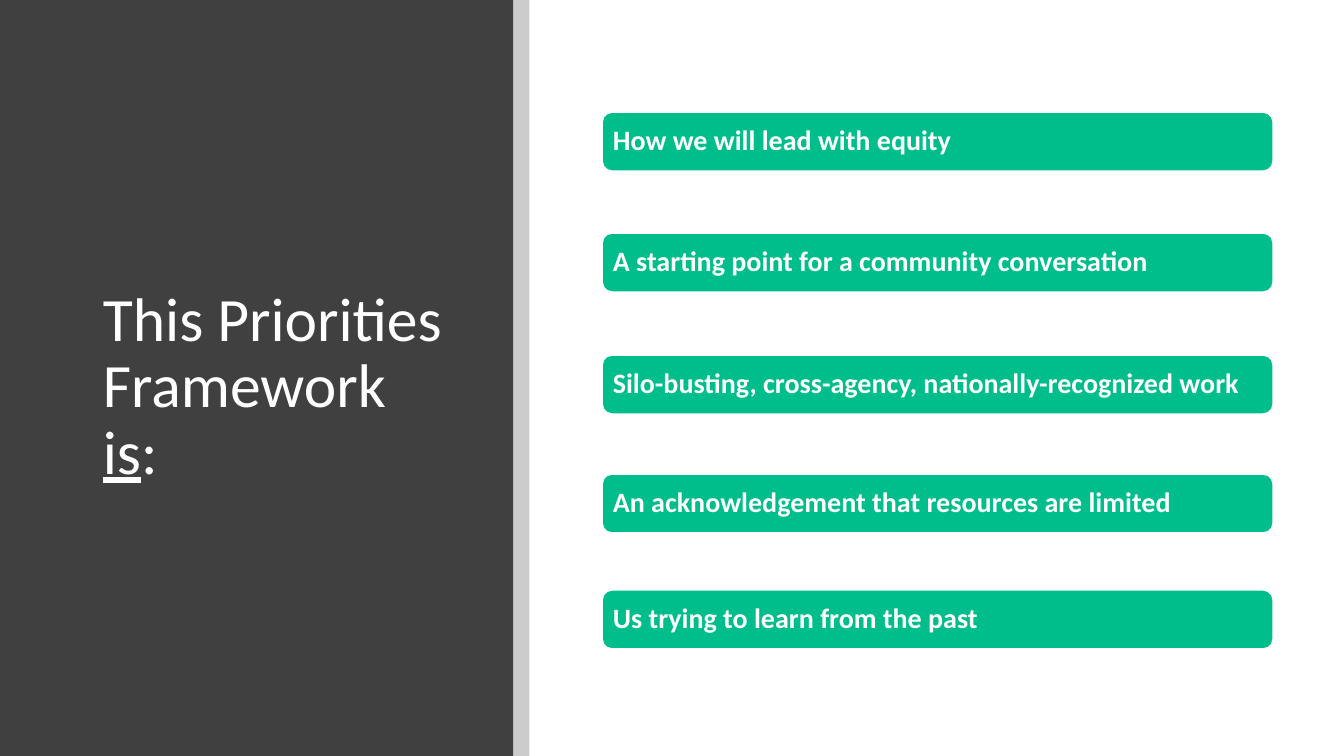
"""Build the slide that says what the Priorities Framework is."""
from lxml import etree
from pptx import Presentation
from pptx.dml.color import RGBColor
from pptx.enum import shapes, text
from pptx.oxml.ns import qn
from pptx.util import Inches, Pt

CHARCOAL = RGBColor(0x40, 0x40, 0x40)
BLACK = RGBColor(0x00, 0x00, 0x00)
WHITE = RGBColor(0xFF, 0xFF, 0xFF)
GREEN = RGBColor(0x00, 0xBE, 0x8C)

TITLE_FONT = {"name": "Calibri", "size": Pt(44)}
BAR_FONT = {"name": "Calibri", "size": Pt(20), "bold": True}
BAR_FRAME = {
    "word_wrap": True,
    "vertical_anchor": text.MSO_ANCHOR.MIDDLE,
    "margin_left": Inches(0.08),
    "margin_right": Inches(0.08),
    "margin_top": Inches(0.08),
    "margin_bottom": Inches(0.08),
}
TITLE_FRAME = {
    "word_wrap": True,
    "auto_size": text.MSO_AUTO_SIZE.NONE,
    "vertical_anchor": text.MSO_ANCHOR.MIDDLE,
}
PARAGRAPH = {"alignment": text.PP_ALIGN.LEFT, "line_spacing": 0.9}


def add_block(s, kind, left, top, width, height, color):
    sp = s.shapes.add_shape(
        kind, Inches(left), Inches(top), Inches(width), Inches(height))
    sp.shadow.inherit = False
    sp.fill.solid()
    sp.fill.fore_color.rgb = color
    sp.line.fill.background()
    return sp


def add_run(p, wording, font):
    r = p.add_run()
    r.text = wording
    r.font.color.rgb = WHITE
    for name, value in font.items():
        setattr(r.font, name, value)
    return r


prs = Presentation()
prs.slide_width = Inches(13.33)
prs.slide_height = Inches(7.5)
s = prs.slides.add_slide(prs.slide_layouts[5])

add_block(s, shapes.MSO_SHAPE.RECTANGLE, 0, 0, 5.09, 7.5, CHARCOAL)
strip = add_block(s, shapes.MSO_SHAPE.RECTANGLE, 5.09, 0, 0.16, 7.5, BLACK)
strip_color = strip.element.spPr.find(qn("a:solidFill"))[0]
etree.SubElement(strip_color, qn("a:alpha"), val="20000")

title = s.shapes.title
title.left, title.top = Inches(0.92), Inches(0.89)
title.width, title.height = Inches(3.65), Inches(5.91)
strip.element.addnext(title.element)
tf = title.text_frame
for name, value in TITLE_FRAME.items():
    setattr(tf, name, value)
p = tf.paragraphs[0]
for name, value in PARAGRAPH.items():
    setattr(p, name, value)
for wording, underline in [
    ("This Priorities Framework ", False), ("is", True), (":", False),
]:
    add_run(p, wording, {**TITLE_FONT, "underline": underline})

for top, wording in [
    (1.11, "How we will lead with equity"),
    (2.31, "A starting point for a community conversation"),
    (3.52, "Silo-busting, cross-agency, nationally-recognized work"),
    (4.7, "An acknowledgement that resources are limited"),
    (5.85, "Us trying to learn from the past"),
]:
    bar = add_block(
        s, shapes.MSO_SHAPE.ROUNDED_RECTANGLE, 5.97, top, 6.66, 0.59, GREEN)
    bar.line.color.rgb = WHITE
    bar.line.width = Pt(1.5)
    tf = bar.text_frame
    for name, value in BAR_FRAME.items():
        setattr(tf, name, value)
    p = tf.paragraphs[0]
    for name, value in PARAGRAPH.items():
        setattr(p, name, value)
    add_run(p, wording, BAR_FONT)

prs.save("out.pptx")
